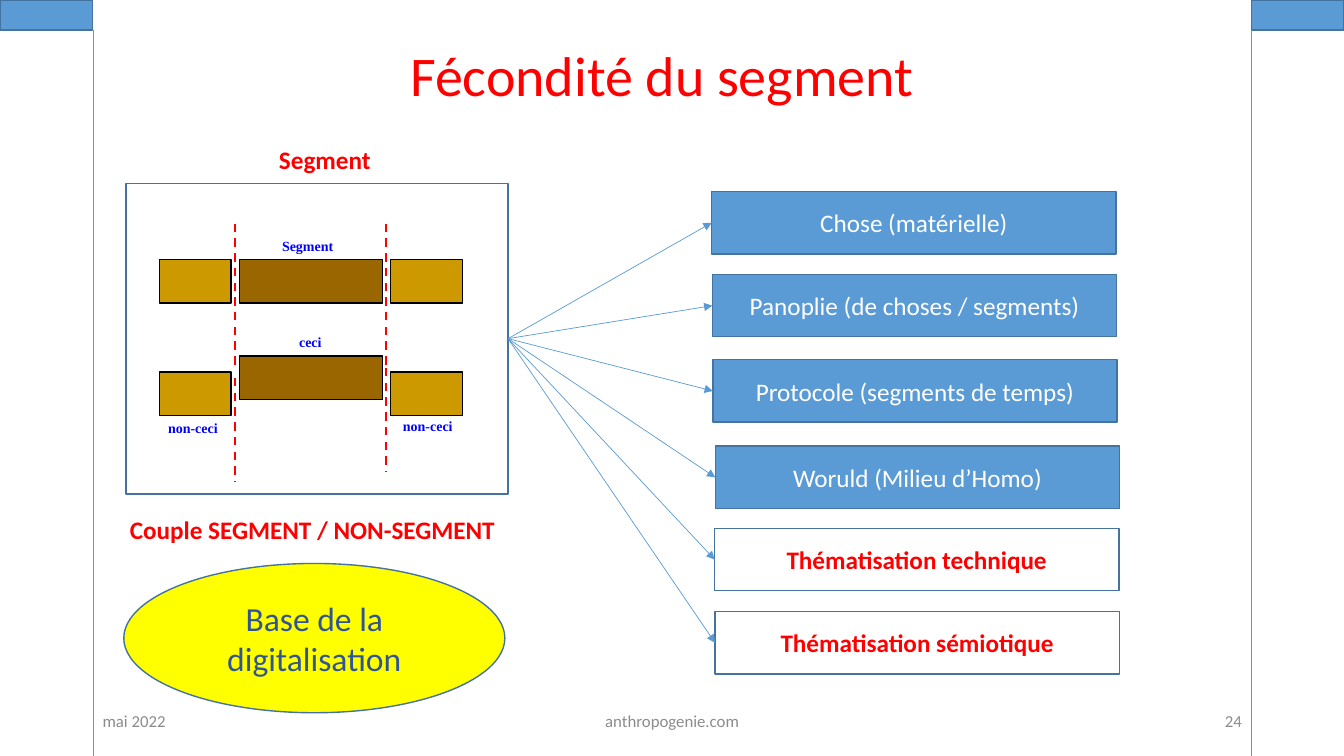
import dataclasses
import typing

import lxml.etree
import pptx
import pptx.dml.color
import pptx.enum.dml
import pptx.enum.shapes
import pptx.enum.text
import pptx.oxml.ns
import pptx.util

Pt = pptx.util.Pt
SHAPE = pptx.enum.shapes.MSO_SHAPE
ALIGN = pptx.enum.text.PP_ALIGN
ANCHOR = pptx.enum.text.MSO_ANCHOR
FIT = pptx.enum.text.MSO_AUTO_SIZE

COLORS = {
    "blue": "5B9BD5", "edge": "43739E", "navy": "2F5597", "white": "FFFFFF",
    "red": "FF0000", "yellow": "FFFF00", "grey": "8C8C8C", "black": "000000",
    "ochre": "CC9900", "brown": "996600", "label": "0000FF",
}


@dataclasses.dataclass
class Style:
    size: float
    color: str
    bold: bool = False
    font: str = "Calibri"
    align: typing.Any = ALIGN.LEFT


@dataclasses.dataclass
class Label:
    text: str
    left: float
    top: float
    width: float
    height: float
    style: Style
    wrap: bool = False
    fill: typing.Optional[str] = None


@dataclasses.dataclass
class Box:
    left: float
    top: float
    width: float
    height: float
    fill: typing.Optional[str]
    line: str = "edge"
    text: str = ""
    style: typing.Optional[Style] = None
    kind: typing.Any = SHAPE.RECTANGLE


@dataclasses.dataclass
class Line:
    x1: float
    y1: float
    x2: float
    y2: float
    color: str = "blue"
    width: float = 0.5
    dashed: bool = False
    arrow: bool = False


def rgb(name: str) -> pptx.dml.color.RGBColor:
    return pptx.dml.color.RGBColor.from_string(COLORS[name])


def set_text(tf, text: str, style: Style) -> None:
    tf.text = text
    p = tf.paragraphs[0]
    p.alignment = style.align
    r = p.runs[0]
    r.font.name, r.font.size, r.font.bold = style.font, Pt(style.size), style.bold
    r.font.color.rgb = rgb(style.color)


def add_label(s, label: Label) -> None:
    sp = s.shapes.add_textbox(Pt(label.left), Pt(label.top), Pt(label.width), Pt(label.height))
    tf = sp.text_frame
    set_text(tf, label.text, label.style)
    tf.word_wrap = label.wrap
    if label.wrap:
        tf.vertical_anchor = ANCHOR.MIDDLE
    else:
        tf.auto_size = FIT.SHAPE_TO_FIT_TEXT
    if label.fill:
        sp.fill.solid()
        sp.fill.fore_color.rgb = rgb(label.fill)


def add_box(s, box: Box):
    sp = s.shapes.add_shape(box.kind, Pt(box.left), Pt(box.top), Pt(box.width), Pt(box.height))
    sp.shadow.inherit = False
    if box.fill:
        sp.fill.solid()
        sp.fill.fore_color.rgb = rgb(box.fill)
    else:
        sp.fill.background()
    sp.line.color.rgb = rgb(box.line)
    sp.line.width = Pt(1)
    if box.style:
        set_text(sp.text_frame, box.text, box.style)
        sp.text_frame.word_wrap = True
        sp.text_frame.vertical_anchor = ANCHOR.MIDDLE
    return sp


def add_line(s, line: Line):
    cx = s.shapes.add_connector(pptx.enum.shapes.MSO_CONNECTOR.STRAIGHT,
                                Pt(line.x1), Pt(line.y1), Pt(line.x2), Pt(line.y2))
    cx.line.color.rgb = rgb(line.color)
    cx.line.width = Pt(line.width)
    if line.dashed:
        cx.line.dash_style = pptx.enum.dml.MSO_LINE.DASH
    qn = pptx.oxml.ns.qn
    if line.arrow:
        ln = cx.line._get_or_add_ln()
        lxml.etree.SubElement(ln, qn("a:tailEnd")).set("type", "triangle")
    lxml.etree.SubElement(cx._element.spPr, qn("a:effectLst"))
    return cx


def main() -> None:
    prs = pptx.Presentation()
    prs.slide_width, prs.slide_height = Pt(960), Pt(540)
    s = prs.slides.add_slide(prs.slide_layouts[5])

    # Title
    title = s.shapes.title
    title.left, title.top, title.width, title.height = Pt(285.8), Pt(25.2), Pt(389.5), Pt(55.4)
    set_text(title.text_frame, "Fécondité du segment", Style(40, "red"))
    title.text_frame.vertical_anchor = ANCHOR.TOP
    title.text_frame.auto_size = FIT.NONE
    title.text_frame.word_wrap = False

    # Footer
    for text, left, width, align in (("mai 2022", 66.2, 216, ALIGN.LEFT),
                                     ("anthropogenie.com", 318.2, 324, ALIGN.CENTER),
                                     ("24", 678.2, 216, ALIGN.RIGHT)):
        add_label(s, Label(text, left, 500.4, width, 28.8,
                           Style(12, "grey", align=align), wrap=True))

    # Segment diagram: three pieces in a row, then the middle one lifted out
    frame = add_box(s, Box(90, 131, 272.9, 221.8, None))
    for side_top, middle_top in ((185.4, 185.4), (265.7, 254.2)):
        for left, top, width, fill in ((113.8, side_top, 51.1, "ochre"),
                                       (170.9, middle_top, 102.2, "brown"),
                                       (279.1, side_top, 51.1, "ochre")):
            add_box(s, Box(left, top, width, 31, fill, "black"))
    for x, y1, y2 in ((167.8, 159.8, 262.8), (275.8, 159.8, 262.8),
                      (167.8, 270, 344.2), (275.8, 262.8, 337)):
        add_line(s, Line(x, y1, x, y2, "red", 1.5, dashed=True))
    small = Style(10, "label", True, "Times New Roman")
    for text, left, top, width in (("Segment", 194.4, 166.3, 57.6), ("ceci", 206.6, 234.7, 31),
                                   ("non-ceci", 113, 295.9, 50.4),
                                   ("non-ceci", 280.8, 294.5, 50.4)):
        add_label(s, Label(text, left, top, width, 19.4, small))

    # Headings of the diagram
    heading = Style(18, "red", True)
    add_label(s, Label("Segment", 192.2, 99.4, 80.6, 28.8, heading))
    add_label(s, Label("Couple SEGMENT / NON-SEGMENT", 85.7, 363.6, 277.9, 28.8,
                       heading, fill="white"))

    # Outcomes, each joined to the diagram by an arrow
    plain = Style(18, "white", align=ALIGN.CENTER)
    strong = Style(18, "red", True, align=ALIGN.CENTER)
    for text, left, top, fill, style in (
            ("Chose (matérielle)", 508.4, 136.8, "blue", plain),
            ("Panoplie (de choses / segments)", 508.9, 196, "blue", plain),
            ("Protocole (segments de temps)", 509.2, 257, "blue", plain),
            ("Woruld (Milieu d’Homo)", 511, 318.7, "blue", plain),
            ("Thématisation technique", 510.5, 377.4, "white", strong),
            ("Thématisation sémiotique", 510.8, 436.9, "white", strong)):
        sp = add_box(s, Box(left, top, 288.7, 44.6, fill, text=text, style=style))
        arrow = add_line(s, Line(362.9, 241.9, left, top + 22.3, arrow=True))
        arrow.begin_connect(frame, 3)
        arrow.end_connect(sp, 1)

    # Conclusion
    add_box(s, Box(88.4, 402.5, 272.2, 106.6, "yellow", text="Base de la digitalisation",
                   style=Style(24, "navy", align=ALIGN.CENTER), kind=SHAPE.OVAL))

    # Side margins
    for left, x in ((0, 66.8), (893.9, 893.6)):
        add_box(s, Box(left, 0, 66.1, 21.6, "blue"))
        add_line(s, Line(x, 21.6, x, 540))

    prs.save("out.pptx")


if __name__ == "__main__":
    main()
